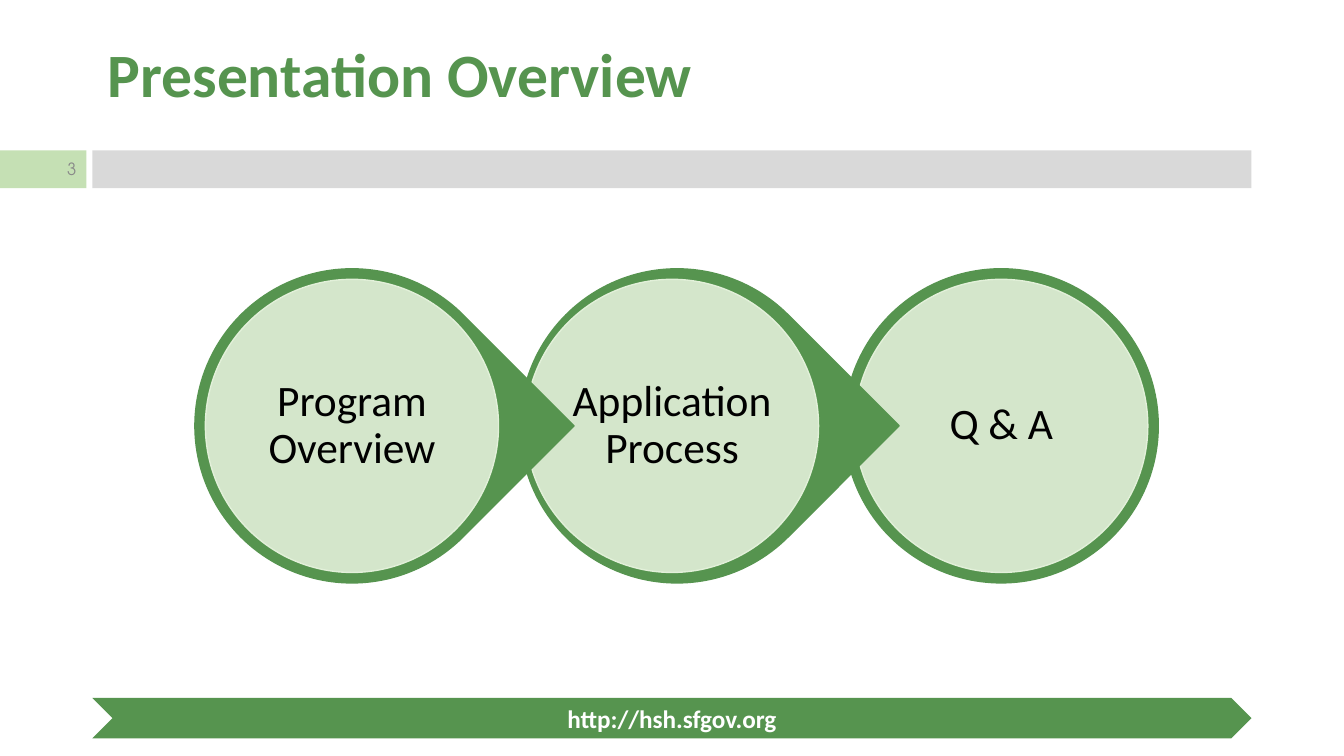
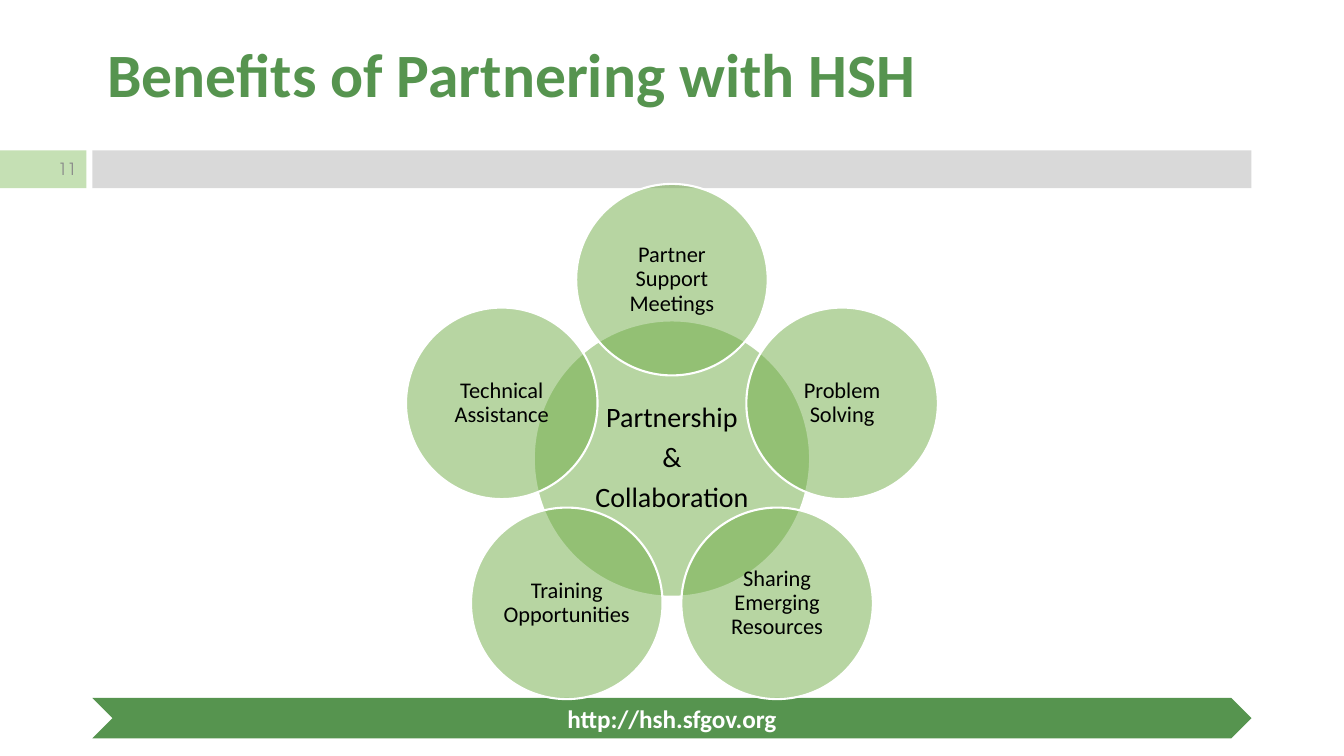
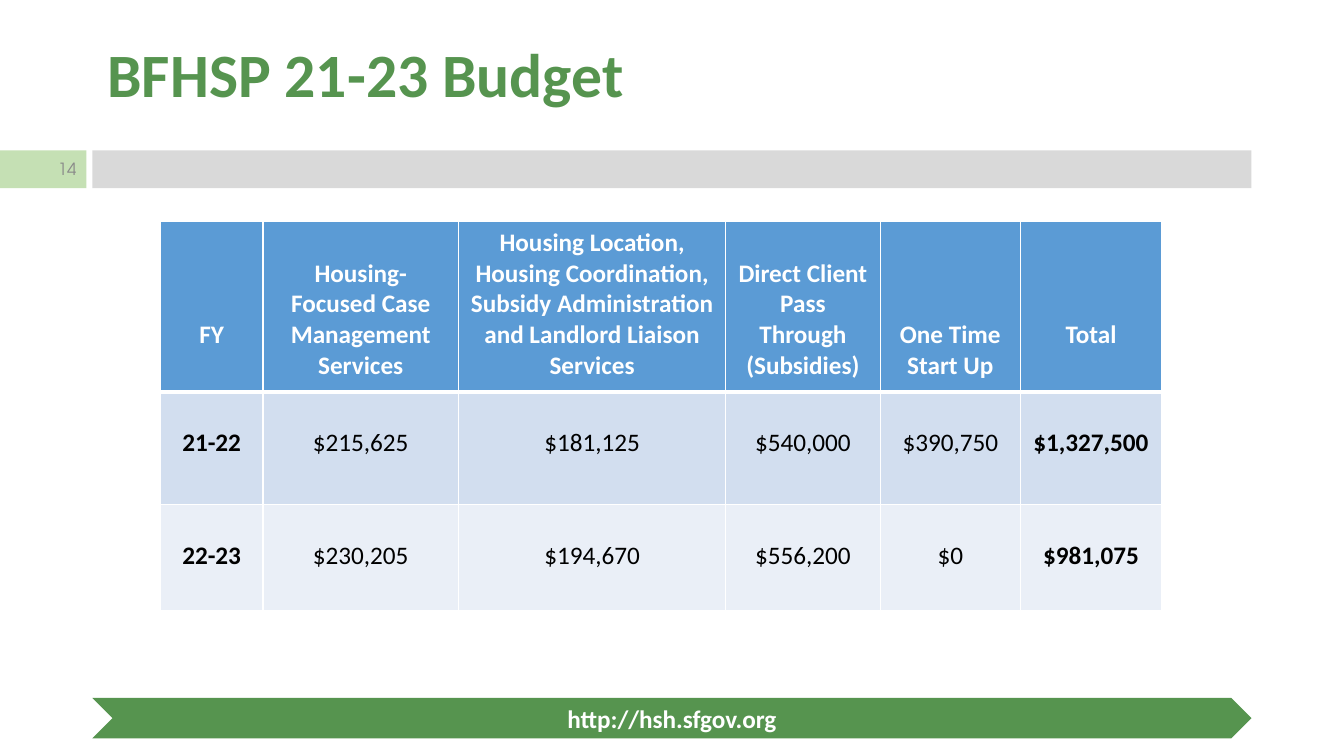
"""Build three slides: overview, partnership benefits and budget."""
from dataclasses import dataclass
from math import cos, pi, sin

from lxml import etree
from pptx import Presentation
from pptx.dml.color import RGBColor
from pptx.enum.shapes import MSO_SHAPE
from pptx.enum.text import MSO_ANCHOR, MSO_AUTO_SIZE, PP_ALIGN
from pptx.oxml.ns import qn
from pptx.util import Emu, Inches, Pt

LEFT, CENTER, RIGHT = PP_ALIGN.LEFT, PP_ALIGN.CENTER, PP_ALIGN.RIGHT
TOP, MIDDLE, BOTTOM = MSO_ANCHOR.TOP, MSO_ANCHOR.MIDDLE, MSO_ANCHOR.BOTTOM
RECT, CHEVRON = MSO_SHAPE.RECTANGLE, MSO_SHAPE.CHEVRON
OVAL, TEARDROP = MSO_SHAPE.OVAL, MSO_SHAPE.TEAR

COLS, ROWS = 160, 90
CELL = Inches(13.3333) / COLS
GREEN, PALE, TAG, GRAY = "56944F", "E2F0D9", "C5E0B4", "D9D9D9"
PETAL, HEADER, WHITE, BLACK = "70AD47", "5B9BD5", "FFFFFF", "000000"
STRIPES = ("D2DEEF", "EAEFF7")
BAND_X, BAND_W, BAND_Y, BAND_H = 11, 138, 17.9, 4.5
TITLE_ONLY = 5


@dataclass(frozen=True)
class Box:
    """A rectangle in grid columns and rows."""
    x: float
    y: float
    w: float
    h: float


@dataclass(frozen=True)
class Step:
    """A stage of the process, with the centres of its rim and its disc."""
    text: str
    rim_x: float
    disc_x: float
    kind: int = TEARDROP


STEPS = (
    Step("Program Overview", 41.9, 41.9),
    Step("Application Process", 80.6, 80),
    Step("Q & A", 119.2, 119.2, OVAL),
)
BENEFITS = (
    "Partner Support Meetings", "Problem Solving",
    "Sharing Emerging Resources", "Training Opportunities",
    "Technical Assistance",
)
BUDGET_COLS = (12.2, 23.3, 31.8, 18.4, 16.7, 16.8)
BUDGET_ROWS = (20.3, 13.4, 12.6)
BUDGET = (
    ("FY", "Housing- Focused Case Management Services",
     "Housing Location, Housing Coordination, Subsidy Administration "
     "and Landlord Liaison Services",
     "Direct Client Pass Through (Subsidies)", "One Time Start Up", "Total"),
    ("21-22", "$215,625", "$181,125", "$540,000", "$390,750", "$1,327,500"),
    ("22-23", "$230,205", "$194,670", "$556,200", "$0", "$981,075"),
)


def grid(n: float) -> Emu:
    """Turn grid cells into a length."""
    return Emu(round(n * CELL))


def rgb(code: str) -> RGBColor:
    """Turn a hex string into a colour."""
    return RGBColor.from_string(code)


def disc(x: float, y: float, size: float) -> Box:
    """Return the square box around a centre."""
    return Box(x - size / 2, y - size / 2, size, size)


def place(sp, box: Box) -> None:
    """Move a shape to its box."""
    sp.left, sp.top = grid(box.x), grid(box.y)
    sp.width, sp.height = grid(box.w), grid(box.h)


def write(tf, text: str, *, size: float, color: str = BLACK,
          font: str = "Calibri", bold: bool = False, align=CENTER,
          spacing: float = 1.0, after: float = 0) -> None:
    """Fill a text frame, one paragraph a line."""
    tf.word_wrap = True
    for i, line in enumerate(text.split("\n")):
        p = tf.add_paragraph() if i else tf.paragraphs[0]
        p.alignment, p.line_spacing = align, spacing
        p.space_before, p.space_after = Pt(0), Pt(after)
        r = p.add_run()
        r.text = line
        r.font.name, r.font.size, r.font.bold = font, Pt(size), bold
        r.font.color.rgb = rgb(color)


def add_shape(slide, kind: int, box: Box, fill: str, *, alpha: int = 100,
              line: str = "", width: float = 1):
    """Draw a filled preset shape."""
    sp = slide.shapes.add_shape(kind, 0, 0, 0, 0)
    place(sp, box)
    sp.shadow.inherit = False
    sp.fill.solid()
    sp.fill.fore_color.rgb = rgb(fill)
    if alpha < 100:
        clr = sp._element.spPr.find(qn("a:solidFill"))[0]
        etree.SubElement(clr, qn("a:alpha")).set("val", str(alpha * 1000))
    if line:
        sp.line.color.rgb, sp.line.width = rgb(line), Pt(width)
    else:
        sp.line.fill.background()
    sp.text_frame.vertical_anchor = MIDDLE
    return sp


def add_disc(slide, box: Box, text: str, *, size: float, inset: float,
             **look) -> None:
    """Draw a labelled circle."""
    tf = add_shape(slide, OVAL, box, **look).text_frame
    tf.margin_left = tf.margin_right = Inches(inset)
    tf.margin_top = tf.margin_bottom = Inches(inset)
    write(tf, text, size=size, spacing=0.9, after=round(size * 0.35))


def add_slide(prs, title: str, number: int):
    """Add a slide with the shared title, bands and footer."""
    slide = prs.slides.add_slide(prs.slide_layouts[TITLE_ONLY])
    tag = add_shape(slide, RECT, Box(0, BAND_Y, 10.3, BAND_H), TAG)
    write(tag.text_frame, str(number), size=12, color="898989",
          font="TeX Gyre Adventor", align=RIGHT)
    add_shape(slide, RECT, Box(BAND_X, BAND_Y, BAND_W, BAND_H), GRAY)
    footer = add_shape(slide, CHEVRON, Box(BAND_X, 83.1, BAND_W, 4.8), GREEN)
    write(footer.text_frame, "http://hsh.sfgov.org", size=18, color=WHITE,
          bold=True)
    sp = slide.shapes.title
    place(sp, Box(11.6, 0.5, BAND_W, 17.4))
    tf = sp.text_frame
    tf.auto_size, tf.vertical_anchor = MSO_AUTO_SIZE.NONE, MIDDLE
    write(tf, title, size=44, color=GREEN, bold=True, align=LEFT, spacing=0.9)
    return slide


def set_borders(cell, **widths: float) -> None:
    """Give a cell white borders, with a width for each side."""
    tc_pr = cell._tc.get_or_add_tcPr()
    for side, width in widths.items():
        ln = etree.SubElement(tc_pr, qn(f"a:ln{side}"), w=str(Pt(width)))
        fill = etree.SubElement(ln, qn("a:solidFill"))
        etree.SubElement(fill, qn("a:srgbClr"), val=WHITE)


def add_overview(prs) -> None:
    """Add the process slide, last stage at the back."""
    slide = add_slide(prs, "Presentation Overview", 3)
    y = 50.7
    for step in reversed(STEPS):
        rim = add_shape(slide, step.kind, disc(step.rim_x, y, 37.4), GREEN,
                        line=GREEN)
        if step.kind == TEARDROP:
            rim.adjustments[0] = 1
            rim.rotation = 45
        add_disc(slide, disc(step.disc_x, y, 34.9), step.text, size=31,
                 inset=0.04, fill=PALE, alpha=90, line=PALE)


def add_benefits(prs) -> None:
    """Add the hub and its ring of benefits."""
    slide = add_slide(prs, "Benefits of Partnering with HSH", 11)
    x, y, orbit = COLS / 2, 54.6, 21.3
    look = dict(fill=PETAL, alpha=50, line=WHITE, width=1.5)
    add_disc(slide, disc(x, y, 32.9), "Partnership\n&\nCollaboration",
             size=20, inset=0.03, **look)
    for i, text in enumerate(BENEFITS):
        angle = 2 * pi * i / len(BENEFITS)
        box = disc(x + orbit * sin(angle), y - orbit * cos(angle), 22.8)
        add_disc(slide, box, text, size=16, inset=0.02, **look)


def add_budget(prs) -> None:
    """Add the budget table."""
    slide = add_slide(prs, "BFHSP 21-23 Budget", 14)
    table = slide.shapes.add_table(
        len(BUDGET_ROWS), len(BUDGET_COLS), grid(19.1), grid(26.4),
        grid(sum(BUDGET_COLS)), grid(sum(BUDGET_ROWS))).table
    for col, width in zip(table.columns, BUDGET_COLS):
        col.width = grid(width)
    for row, height in zip(table.rows, BUDGET_ROWS):
        row.height = grid(height)
    for i, texts in enumerate(BUDGET):
        for j, text in enumerate(texts):
            cell = table.cell(i, j)
            head, outer = i == 0, j in (0, len(texts) - 1)
            set_borders(cell, L=1, R=1, T=3 if i == 1 else 1,
                        B=3 if head else 1)
            cell.fill.solid()
            cell.fill.fore_color.rgb = rgb(HEADER if head else STRIPES[i - 1])
            cell.vertical_anchor = BOTTOM if head else TOP
            if head:
                cell.margin_bottom = Inches(0.42 if outer else 0.11)
            else:
                cell.margin_top = Inches(0.35)
            write(cell.text_frame, text, size=18, bold=head or outer,
                  color=WHITE if head else BLACK)


def main() -> None:
    """Build and save the presentation."""
    prs = Presentation()
    prs.slide_width, prs.slide_height = grid(COLS), grid(ROWS)
    add_overview(prs)
    add_benefits(prs)
    add_budget(prs)
    prs.save("out.pptx")


if __name__ == "__main__":
    main()
